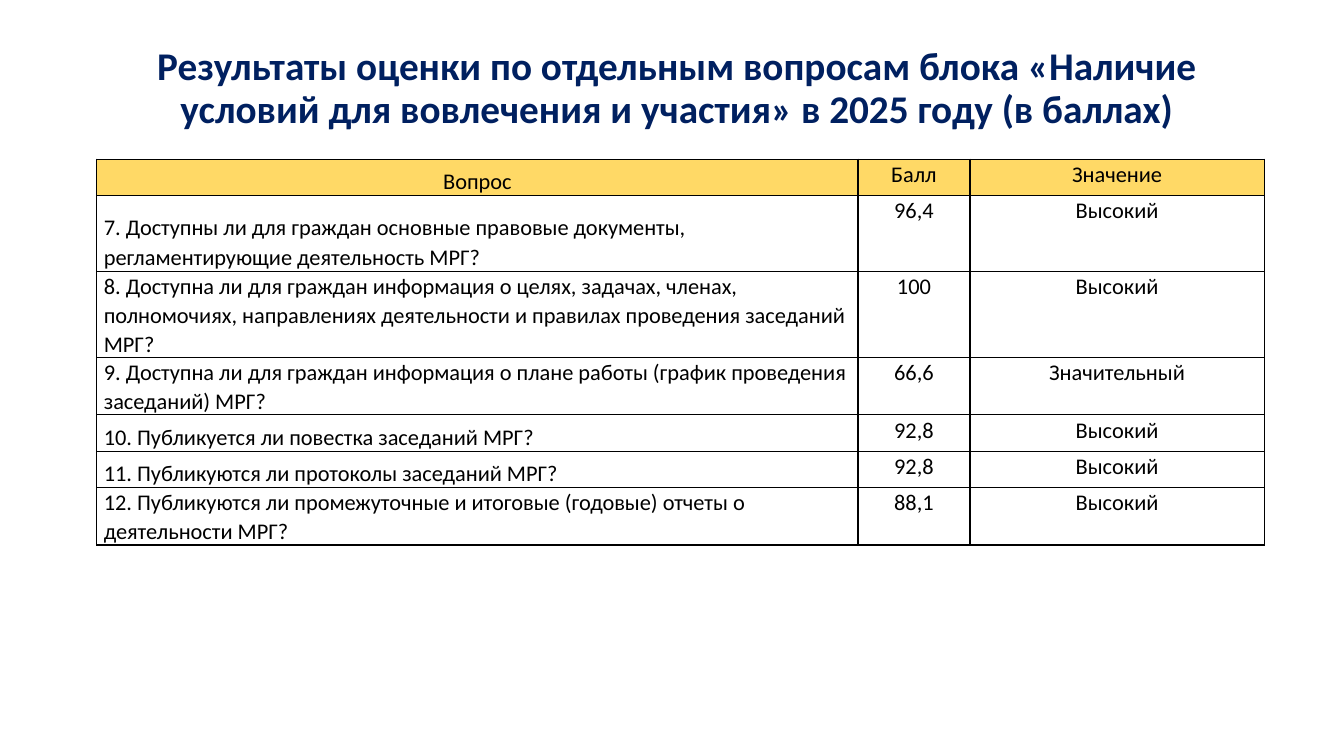
from dataclasses import dataclass

from lxml import etree
from pptx import Presentation
from pptx.dml.color import RGBColor
from pptx.enum.text import MSO_ANCHOR, PP_ALIGN
from pptx.oxml.ns import qn
from pptx.util import Inches, Pt

LEFT, CENTER = PP_ALIGN.LEFT, PP_ALIGN.CENTER
TOP, MIDDLE, BOTTOM = MSO_ANCHOR.TOP, MSO_ANCHOR.MIDDLE, MSO_ANCHOR.BOTTOM


@dataclass(frozen=True)
class Theme:
    font: str = "Calibri"
    title_color: str = "002060"
    text_color: str = "000000"
    border_color: str = "000000"
    header_fill: str = "FFD966"
    title_size: int = 28
    table_size: int = 16
    border_width: int = 1


THEME = Theme()

TITLE = ("Результаты оценки по отдельным вопросам блока «Наличие условий "
         "для вовлечения и участия» в 2025 году (в баллах)")
HEADER = ("Вопрос", "Балл", "Значение")
RATINGS = [
    ("7. Доступны ли для граждан основные правовые документы, "
     "регламентирующие деятельность МРГ?", "96,4", "Высокий"),
    ("8. Доступна ли для граждан информация о целях, задачах, членах, "
     "полномочиях, направлениях деятельности и правилах проведения "
     "заседаний МРГ?", "100", "Высокий"),
    ("9. Доступна ли для граждан информация о плане работы "
     "(график проведения заседаний) МРГ?", "66,6", "Значительный"),
    ("10. Публикуется ли повестка заседаний МРГ?", "92,8", "Высокий"),
    ("11. Публикуются ли протоколы заседаний МРГ?", "92,8", "Высокий"),
    ("12. Публикуются ли промежуточные и итоговые (годовые) отчеты "
     "о деятельности МРГ?", "88,1", "Высокий"),
]
COLUMN_WIDTHS = (7.55, 1.11, 2.92)
ROW_HEIGHTS = (0.36, 0.75, 0.75, 0.36, 0.36, 0.36, 0.36)


def write_text(frame, text, *, size, color, bold=False, align=LEFT,
               line_spacing=1.0, space_after=0):
    paragraph = frame.paragraphs[0]
    paragraph.alignment = align
    paragraph.line_spacing = line_spacing
    paragraph.space_after = Pt(space_after)
    run = paragraph.add_run()
    run.text = text
    run.font.name = THEME.font
    run.font.size = Pt(size)
    run.font.bold = bold
    run.font.color.rgb = RGBColor.from_string(color)


def add_title(slide):
    title = slide.shapes.add_textbox(Inches(0.96), Inches(0.38),
                                     Inches(11.5), Inches(1.01))
    title.text_frame.word_wrap = True
    title.text_frame.vertical_anchor = MIDDLE
    write_text(title.text_frame, TITLE, size=THEME.title_size, bold=True,
               color=THEME.title_color, align=CENTER, line_spacing=0.9)


def draw_borders(cell):
    properties = cell._tc.get_or_add_tcPr()
    for side in ("a:lnL", "a:lnR", "a:lnT", "a:lnB"):
        line = etree.SubElement(properties, qn(side),
                                w=str(Pt(THEME.border_width)))
        fill = etree.SubElement(line, qn("a:solidFill"))
        etree.SubElement(fill, qn("a:srgbClr"), val=THEME.border_color)


def fill_cell(cell, text, *, is_header, is_question):
    cell.margin_left = cell.margin_right = Inches(0.07)
    cell.margin_top = cell.margin_bottom = 0
    cell.vertical_anchor = BOTTOM if is_question else TOP
    draw_borders(cell)
    if is_header:
        cell.fill.solid()
        cell.fill.fore_color.rgb = RGBColor.from_string(THEME.header_fill)
    else:
        cell.fill.background()
    write_text(cell.text_frame, text, size=THEME.table_size,
               color=THEME.text_color, line_spacing=1.07, space_after=8,
               align=LEFT if is_question and not is_header else CENTER)


def add_ratings_table(slide):
    rows = [HEADER, *RATINGS]
    table = slide.shapes.add_table(
        len(rows), len(HEADER), Inches(0.96), Inches(1.58),
        Inches(sum(COLUMN_WIDTHS)), Inches(sum(ROW_HEIGHTS))).table
    table.first_row = table.horz_banding = False
    for column, width in zip(table.columns, COLUMN_WIDTHS):
        column.width = Inches(width)
    for row, height in zip(table.rows, ROW_HEIGHTS):
        row.height = Inches(height)
    for row_index, texts in enumerate(rows):
        for column_index, text in enumerate(texts):
            fill_cell(table.cell(row_index, column_index), text,
                      is_header=row_index == 0,
                      is_question=column_index == 0)


def main():
    presentation = Presentation()
    presentation.slide_width = Inches(13.33)
    presentation.slide_height = Inches(7.5)
    slide = presentation.slides.add_slide(presentation.slide_layouts[6])
    add_title(slide)
    add_ratings_table(slide)
    presentation.save("out.pptx")


if __name__ == "__main__":
    main()
